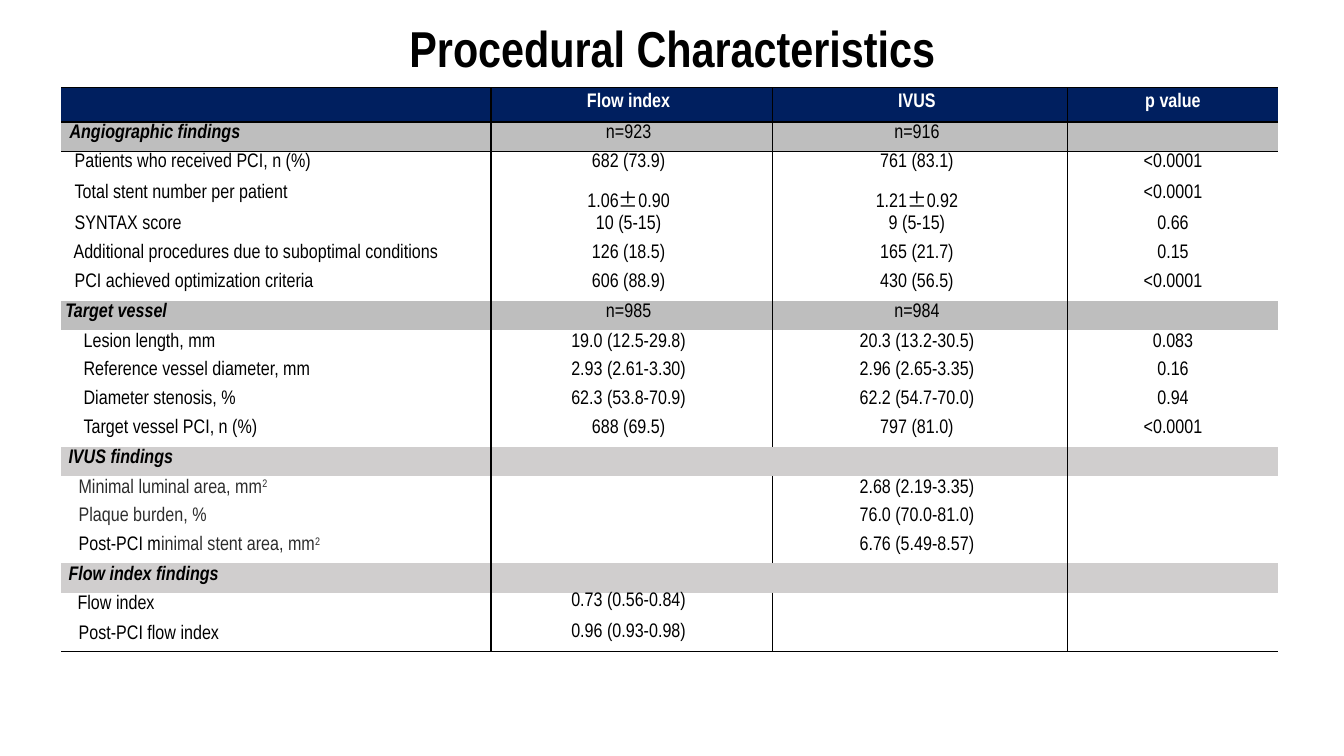
from lxml import etree
from pptx import Presentation
from pptx.dml.color import RGBColor
from pptx.enum import text
from pptx.oxml import ns
from pptx.util import Inches, Pt

BLACK = RGBColor(0x00, 0x00, 0x00)
WHITE = RGBColor(0xFF, 0xFF, 0xFF)
NAVY = RGBColor(0x00, 0x1F, 0x5F)
GREY = RGBColor(0xBE, 0xBE, 0xBE)
LIGHT_GREY = RGBColor(0xD0, 0xCE, 0xCE)
CHARCOAL = RGBColor(0x2D, 0x2D, 0x2D)

LATIN_FONT = "Arial Narrow"
SYMBOL_FONT = "Noto Sans CJK KR"
NO_STYLE = "{2D5ABB26-0587-4C30-8999-92F81FD0307C}"
SUPERSCRIPT = "superscript"

COLUMN_WIDTHS = (4.26, 2.79, 2.93, 2.09)
RIGHT_MARGINS = (0, 0.06, 0.06, 0)
HEADER_HEIGHT = 0.34
ROW_HEIGHT = 0.29
TOP_MARGIN = 0.02
TOP_MARGINS = {0: 0.05, 3: 0.04} | dict.fromkeys((7, 8, 12, 13, 16, 17, 18), 0.03)
VALUE_TOP_MARGINS = {17: 0, 18: 0.01}
MERGES = (((12, 1), (12, 2)), ((13, 3), (15, 3)), ((16, 1), (16, 2)), ((17, 3), (18, 3)))

BAND_FILLS = {0: NAVY, 1: GREY, 7: GREY, 12: LIGHT_GREY, 16: LIGHT_GREY}

# Label indent, label (text, or runs of text and look), two groups, p value
ROWS = (
    (0, "", "Flow index", "IVUS", "p value"),
    (0.08, "Angiographic findings", "n=923", "n=916", ""),
    (0.13, "Patients who received PCI, n (%)", "682 (73.9)", "761 (83.1)", "<0.0001"),
    (0.13, "Total stent number per patient", "1.06±0.90", "1.21±0.92", "<0.0001"),
    (0.13, "SYNTAX score", "10 (5-15)", "9 (5-15)", "0.66"),
    (0.12, "Additional procedures due to suboptimal conditions",
     "126 (18.5)", "165 (21.7)", "0.15"),
    (0.13, "PCI achieved optimization criteria", "606 (88.9)", "430 (56.5)", "<0.0001"),
    (0.04, "Target vessel", "n=985", "n=984", ""),
    (0.22, "Lesion length, mm", "19.0 (12.5-29.8)", "20.3 (13.2-30.5)", "0.083"),
    (0.22, "Reference vessel diameter, mm", "2.93 (2.61-3.30)", "2.96 (2.65-3.35)", "0.16"),
    (0.22, "Diameter stenosis, %", "62.3 (53.8-70.9)", "62.2 (54.7-70.0)", "0.94"),
    (0.22, "Target vessel PCI, n (%)", "688 (69.5)", "797 (81.0)", "<0.0001"),
    (0.07, "IVUS findings", "", "", ""),
    (0.17, (("Minimal luminal area, mm", CHARCOAL), ("2", SUPERSCRIPT)),
     "", "2.68 (2.19-3.35)", ""),
    (0.17, (("Plaque burden, %", CHARCOAL),), "", "76.0 (70.0-81.0)", ""),
    (0.17, (("Post-PCI m", BLACK), ("inimal stent area, mm", CHARCOAL), ("2", SUPERSCRIPT)),
     "", "6.76 (5.49-8.57)", ""),
    (0.07, "Flow index findings", "", "", ""),
    (0.16, "Flow index", "0.73 (0.56-0.84)", "", ""),
    (0.17, "Post-PCI flow index", "0.96 (0.93-0.98)", "", ""),
)


def add_run(paragraph, words, size, color=BLACK, bold=False, italic=False, name=LATIN_FONT):
    run = paragraph.add_run()
    run.text = words
    font = run.font
    font.name, font.size, font.bold, font.italic = name, Pt(size), bold, italic
    font.color.rgb = color
    return run


def add_value(paragraph, words, color, bold):
    """Write a value, with its plus-minus sign in the symbol font."""
    before, sign, after = words.partition("±")
    add_run(paragraph, before, 14, color, bold)
    if sign:
        run = add_run(paragraph, sign, 14, color, bold, name=SYMBOL_FONT)
        etree.SubElement(run.font._element, ns.qn("a:ea"), typeface=SYMBOL_FONT)
        add_run(paragraph, after, 14, color, bold)


def add_label(paragraph, label, band):
    if isinstance(label, str):
        label = ((label, BLACK),)
    for words, look in label:
        if look == SUPERSCRIPT:
            run = add_run(paragraph, words, 13.5, CHARCOAL)
            run.font._element.set("baseline", "28000")
        else:
            add_run(paragraph, words, 14, look, band, band)


def add_border(cell, side, visible=True):
    line = etree.SubElement(cell._tc.get_or_add_tcPr(), ns.qn(f"a:ln{side}"), w=str(Pt(1)))
    if visible:
        fill = etree.SubElement(line, ns.qn("a:solidFill"))
        etree.SubElement(fill, ns.qn("a:srgbClr"), val=str(BLACK))
    else:
        etree.SubElement(line, ns.qn("a:noFill"))


def format_cell(cell, row, column):
    if column and not (cell.is_spanned and column == 2):
        add_border(cell, "L")
    if column == len(COLUMN_WIDTHS) - 1:
        add_border(cell, "R", visible=False)
    if row == 0:
        add_border(cell, "T")
    if row in (0, 1) or row + cell.span_height == len(ROWS):
        add_border(cell, "B")
    if row in BAND_FILLS:
        cell.fill.solid()
        cell.fill.fore_color.rgb = BAND_FILLS[row]
    else:
        cell.fill.background()


def fill_cell(cell, row, column):
    indent, *contents = ROWS[row]
    content = contents[column]
    margin = TOP_MARGINS.get(row, TOP_MARGIN)
    if column:
        margin = VALUE_TOP_MARGINS.get(row, margin)
    cell.margin_left = Inches(0 if column else indent)
    cell.margin_top = Inches(margin)
    cell.margin_right = Inches(RIGHT_MARGINS[column])
    cell.margin_bottom = 0
    paragraph = cell.text_frame.paragraphs[0]
    if not content:
        etree.SubElement(paragraph._p, ns.qn("a:endParaRPr"), sz="1000")
    elif column:
        paragraph.alignment = text.PP_ALIGN.CENTER
        add_value(paragraph, content, WHITE if row == 0 else BLACK, row == 0)
    else:
        add_label(paragraph, content, row in BAND_FILLS)


def add_results_table(slide):
    frame = slide.shapes.add_table(len(ROWS), len(COLUMN_WIDTHS), Inches(0.61), Inches(0.87),
                                   Inches(sum(COLUMN_WIDTHS)), Inches(5.56))
    table = frame.table
    table.first_row = table.horz_banding = False
    table._tbl.tblPr.find(ns.qn("a:tableStyleId")).text = NO_STYLE
    for column, width in zip(table.columns, COLUMN_WIDTHS):
        column.width = Inches(width)
    for start, end in MERGES:
        table.cell(*start).merge(table.cell(*end))
    for row in range(len(ROWS)):
        table.rows[row].height = Inches(ROW_HEIGHT if row else HEADER_HEIGHT)
        for column in range(len(COLUMN_WIDTHS)):
            cell = table.cell(row, column)
            format_cell(cell, row, column)
            fill_cell(cell, row, column)


def set_title(slide, words):
    title = slide.shapes.title
    title.left, title.top = Inches(4.05), Inches(0.15)
    title.width, title.height = Inches(5.24), Inches(0.63)
    frame = title.text_frame
    frame.margin_left = frame.margin_right = frame.margin_bottom = 0
    frame.margin_top = Inches(0.02)
    frame.word_wrap = False
    frame.auto_size = text.MSO_AUTO_SIZE.NONE
    frame.vertical_anchor = text.MSO_ANCHOR.TOP
    paragraph = frame.paragraphs[0]
    paragraph.alignment = text.PP_ALIGN.CENTER
    add_run(paragraph, words, 36, bold=True)


def main():
    presentation = Presentation()
    presentation.slide_width, presentation.slide_height = Inches(13.33), Inches(7.5)
    slide = presentation.slides.add_slide(presentation.slide_layouts[5])
    set_title(slide, "Procedural Characteristics")
    add_results_table(slide)
    presentation.save("out.pptx")


if __name__ == "__main__":
    main()
